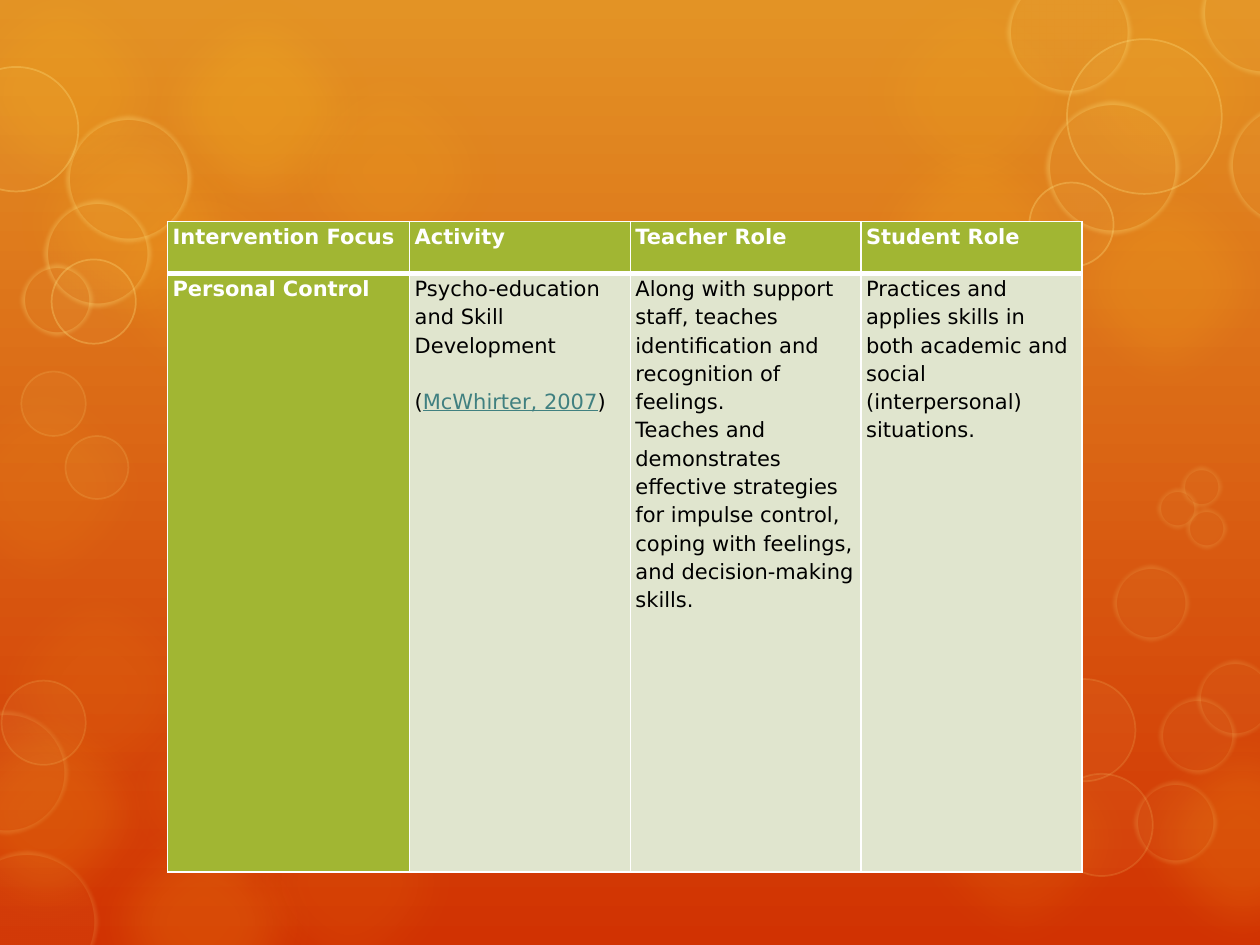
from lxml.etree import SubElement
from pptx import Presentation
from pptx.dml.color import RGBColor
from pptx.enum.shapes import MSO_SHAPE as SHAPE
from pptx.oxml.ns import qn
from pptx.util import Cm, Pt

GOLD, PALE = "FDC61B", "FFE281"
GREEN, SAGE, WHITE, BLACK, TEAL = "A1B633", "E0E5CE", "FFFFFF", "000000", "408080"

# Circles: left, top, diameter in cm, then what varies within the group
GLOW_SIZE = 5.31
GLOWS = [  # left, top, fill opacity
    (-0.65, 11.23, 8), (1.45, 3.05, 10), (5.21, 0.79, 10), (1.45, 15.93, 16),
    (-1.41, -0.81, 14), (2.57, -0.46, 20), (0, 1.83, 15), (20.83, -0.81, 10),
    (16.99, -0.74, 10), (20.83, 3.05, 15), (22.38, 14.27, 16), (-1.74, 13.74, 16),
    (1.96, 13.31, 8), (16.99, 2.18, 15), (17.93, 14.27, 10), (4.39, 15.14, 8),
    (-1.77, 7.16, 8),
]
RINGS = [  # left, top, diameter, line width, line opacity
    (0.03, 13.72, 1.7, 1, 15), (-0.9, 17.15, 2.87, 5, 15), (-1.12, 14.33, 2.49, 5, 15),
    (-0.93, 1.35, 2.51, 1, 30), (1.32, 2.34, 2.54, 5, 30), (0.89, 4.04, 2.16, 5, 30),
    (1.04, 5.23, 1.7, 1, 30), (0.43, 5.33, 1.45, 5, 30), (20.29, -0.61, 2.51, 5, 30),
    (24.21, -0.99, 2.51, 5, 30), (21.51, 0.79, 3.12, 1, 30), (24.77, 2.08, 2.51, 5, 30),
    (21.08, 2.03, 2.69, 5, 30), (20.75, 3.68, 1.7, 1, 30), (21.18, 15.6, 2.06, 1, 15),
    (20.83, 13.69, 2.06, 1, 15), (22.86, 15.75, 1.68, 5, 15), (22.43, 11.38, 1.55, 5, 15),
    (23.37, 14.05, 1.55, 5, 15), (24.13, 13.31, 1.55, 5, 15), (23.8, 9.4, 0.84, 5, 15),
    (23.32, 9.83, 0.84, 5, 15), (23.9, 10.24, 0.84, 5, 15), (0.43, 7.49, 1.3, 1, 15),
    (1.32, 8.79, 1.27, 1, 15),
]

# Cells hold paragraphs, paragraphs hold runs
COLS, ROWS = [4.88, 4.45, 4.65, 4.45], [1.04, 12.07]
CELLS = [
    [[["Intervention Focus"]], [["Activity"]], [["Teacher Role"]], [["Student Role"]]],
    [
        [["Personal Control"]],
        [["Psycho-education and Skill Development"], ["(", "McWhirter, 2007", ")"]],
        [["Along with support staff, teaches identification and recognition of feelings."],
         ["Teaches and demonstrates effective strategies for impulse control, "
          "coping with feelings, and decision-making skills."]],
        [["Practices and applies skills in both academic and social "
          "(interpersonal) situations."]],
    ],
]
CITATION = "McWhirter, 2007"


def rgb(hex_color):
    return RGBColor.from_string(hex_color)


def set_alpha(parent, percent):
    color = next(parent.iter(qn("a:srgbClr")))
    SubElement(color, qn("a:alpha"), val=str(percent * 1000))


class Deck:
    font, size, spacing = "DejaVu Sans", Pt(12), 1.15

    def __init__(self):
        self.prs = Presentation()
        self.prs.slide_width, self.prs.slide_height = Cm(25.4), Cm(19.05)
        self.s = self.prs.slides.add_slide(self.prs.slide_layouts[6])

    def background(self, top, bottom):
        fill = self.s.background.fill
        fill.gradient()
        fill.gradient_angle = 270
        for stop, color, pos in zip(fill.gradient_stops, (top, bottom), (0, 1)):
            stop.color.rgb = rgb(color)
            stop.position = pos

    def circle(self, x, y, d, fill, alpha, width=0, line_alpha=0, soft=0):
        sp = self.s.shapes.add_shape(SHAPE.OVAL, Cm(x), Cm(y), Cm(d), Cm(d))
        sp.fill.solid()
        sp.fill.fore_color.rgb = rgb(fill)
        sp_pr = sp.element.spPr
        set_alpha(sp_pr, alpha)
        if width:
            sp.line.color.rgb = rgb(fill)
            sp.line.width = Pt(width)
            set_alpha(sp_pr.find(qn("a:ln")), line_alpha)
        else:
            sp.line.fill.background()
        sp.shadow.inherit = False
        if soft:
            effects = sp_pr.find(qn("a:effectLst"))
            SubElement(effects, qn("a:softEdge"), rad=str(Cm(soft)))

    def borders(self, cell, widths):
        tc_pr = cell._tc.get_or_add_tcPr()
        for side, width in zip("LRTB", widths):
            ln = SubElement(tc_pr, qn(f"a:ln{side}"), w=str(Pt(width)))
            SubElement(SubElement(ln, qn("a:solidFill")), qn("a:srgbClr"), val=WHITE)

    def paragraph(self, p, runs, color, bold):
        p.line_spacing = self.spacing
        for text in runs:
            r = p.add_run()
            r.text = text
            f = r.font
            f.name, f.size, f.bold = self.font, self.size, bold
            f.color.rgb = rgb(color)
            if text == CITATION:
                f.underline = True
                f.color.rgb = rgb(TEAL)
                p.space_before = Pt(16)

    def cell(self, cell, paragraphs, is_header, is_first_row):
        cell.margin_left = cell.margin_right = Cm(0.1)
        cell.margin_top = cell.margin_bottom = 0
        self.borders(cell, (1, 1, 1, 3) if is_first_row else (1, 1, 3, 1))
        cell.fill.solid()
        cell.fill.fore_color.rgb = rgb(GREEN if is_header else SAGE)
        tf = cell.text_frame
        for i, runs in enumerate(paragraphs):
            p = tf.add_paragraph() if i else tf.paragraphs[0]
            self.paragraph(p, runs, WHITE if is_header else BLACK, is_header)

    def table(self, x, y, cols, rows, content):
        table = self.s.shapes.add_table(len(rows), len(cols), Cm(x), Cm(y),
                                        Cm(sum(cols)), Cm(sum(rows))).table
        for col, width in zip(table.columns, cols):
            col.width = Cm(width)
        for i, (row, height) in enumerate(zip(table.rows, rows)):
            row.height = Cm(height)
            for j, paragraphs in enumerate(content[i]):
                self.cell(table.cell(i, j), paragraphs, i == 0 or j == 0, i == 0)


def main():
    deck = Deck()

    # Warm background with blurred lights and thin rings
    deck.background("E39325", "D13202")
    for x, y, alpha in GLOWS:
        deck.circle(x, y, GLOW_SIZE, GOLD, alpha, soft=0.9)
    for x, y, d, width, line_alpha in RINGS:
        deck.circle(x, y, d, PALE, 5, width, line_alpha, 0.1 if width > 1 else 0)

    # Intervention table
    deck.table(3.38, 4.47, COLS, ROWS, CELLS)
    deck.prs.save("out.pptx")


if __name__ == "__main__":
    main()
